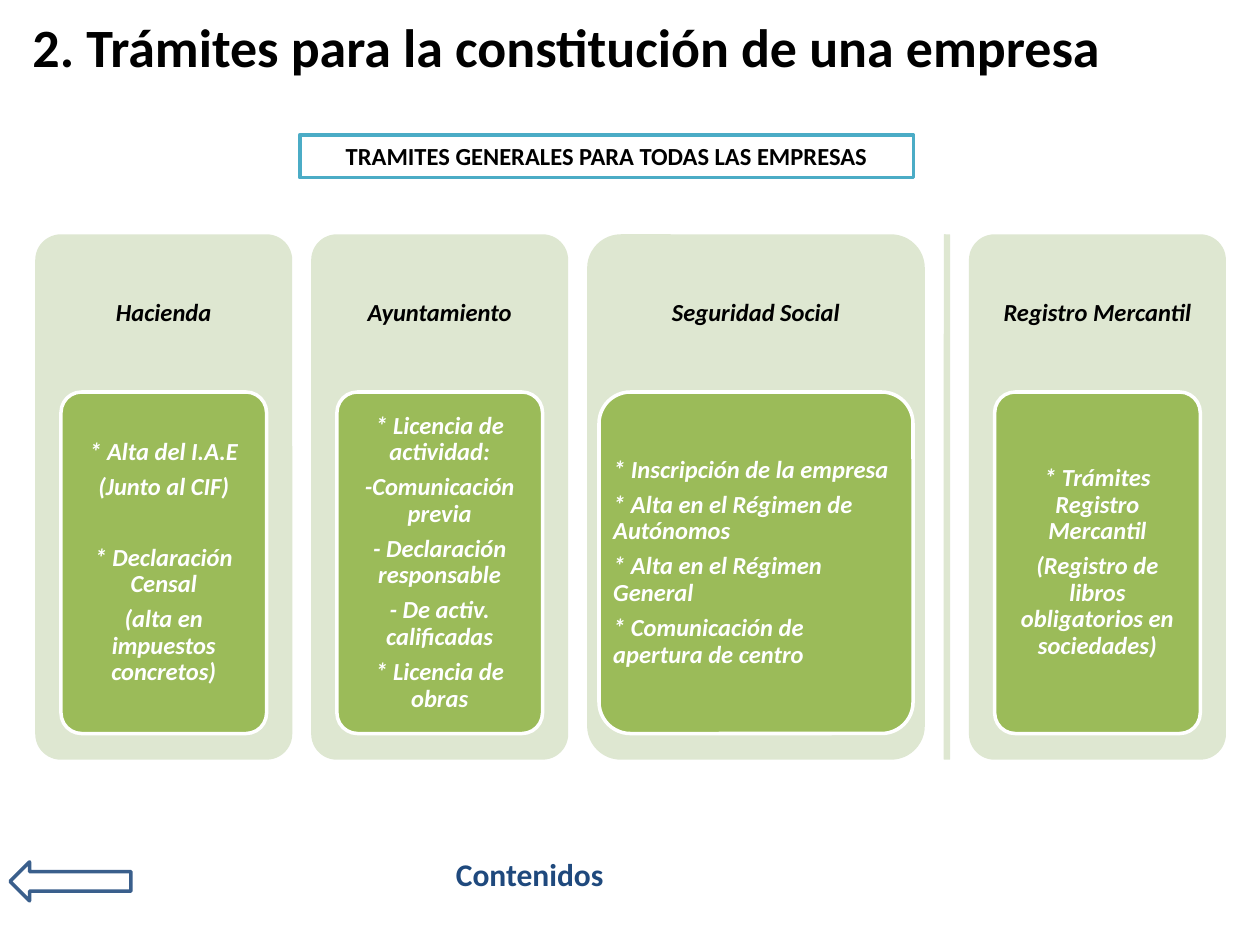
from pptx import Presentation
from pptx.dml.color import RGBColor
from pptx.enum.shapes import MSO_SHAPE as Shape
from pptx.enum.text import MSO_ANCHOR as Anchor, PP_ALIGN as Align
from pptx.util import Inches, Pt

# Grid of 100 columns by 75 rows on a 10 x 7.5 inch slide
CELL = Inches(0.1)
BLACK, WHITE = "000000", "FFFFFF"
PALE, GREEN = "DEE7D1", "9BBB59"
TEAL, BLUE, NAVY = "4BACC6", "3A5F8C", "1F497D"


def rgb(code):
    return RGBColor.from_string(code)


class Deck:
    font = "Calibri"

    def __init__(self):
        self.prs = Presentation()
        self.prs.slide_width, self.prs.slide_height = 100 * CELL, 75 * CELL
        self.s = self.prs.slides.add_slide(self.prs.slide_layouts[6])

    def box(self, at):
        return [round(n * CELL) for n in at]

    def shape(self, kind, at, fill=None, line=None, adj=None):
        sp = self.s.shapes.add_shape(kind, *self.box(at))
        sp.shadow.inherit = False
        if fill:
            sp.fill.solid()
            sp.fill.fore_color.rgb = rgb(fill)
        else:
            sp.fill.background()
        if line:
            sp.line.color.rgb = rgb(line)
            sp.line.width = Pt(2)
        else:
            sp.line.fill.background()
        if adj is not None:
            sp.adjustments[0] = adj
        return sp

    def set_text(self, sp, lines, size, color, align=Align.LEFT, anchor=Anchor.TOP,
                 italic=False, insets=(1, 0.5), spacing=None, after=0):
        tf = sp.text_frame
        tf.word_wrap = True
        tf.vertical_anchor = anchor
        tf.margin_left = tf.margin_right = round(insets[0] * CELL)
        tf.margin_top = tf.margin_bottom = round(insets[1] * CELL)
        tf.text = "\n".join(lines)
        for p in tf.paragraphs:
            p.alignment = align
            p.line_spacing = spacing
            p.space_after = Pt(after)
            for r in p.runs:
                f = r.font
                f.name, f.size, f.bold, f.italic = self.font, Pt(size), True, italic
                f.color.rgb = rgb(color)
        return tf

    def text(self, at, lines, size, color, **style):
        return self.set_text(self.s.shapes.add_textbox(*self.box(at)), lines, size, color, **style)

    def panel(self, x, w):
        self.shape(Shape.ROUNDED_RECTANGLE, (x, TOP, w, HEIGHT), PALE, adj=0.1)

    def column(self, x, w, heading, lines, share, align):
        """Pale panel with a heading and a green card; returns the card's text."""
        style = dict(anchor=Anchor.MIDDLE, italic=True, spacing=0.9, after=4.9)
        self.panel(x, w)
        self.text((x, TOP, w, 0.3 * HEIGHT), [heading], 14, BLACK,
                  align=Align.CENTER, insets=(0.6, 0.6), **style)
        card = self.shape(Shape.ROUNDED_RECTANGLE,
                          (x + w * (1 - share) / 2, TOP + 0.3 * HEIGHT, w * share, 0.65 * HEIGHT),
                          GREEN, WHITE, adj=0.1)
        return self.set_text(card, lines, 14, WHITE, align=align, insets=(0.4, 0.3), **style)


# Panel row: top and height in rows, gap and widths in columns
TOP, HEIGHT, GAP = 18.6, 41.7, 1.5
NARROW, WIDE, STRIP = 20.4, 26.8, 0.5

# Each entry: width, heading, lines, card share of the width, alignment
COLUMNS = [
    (NARROW, "Hacienda",
     ["* Alta del I.A.E", "(Junto al CIF)", "* Declaración Censal",
      "(alta en impuestos concretos)"], 0.8, Align.CENTER),
    (NARROW, "Ayuntamiento",
     ["* Licencia de actividad:", "-Comunicación previa", "- Declaración responsable",
      "- De activ. calificadas", "* Licencia de obras"], 0.8, Align.CENTER),
    (WIDE, "Seguridad Social",
     ["* Inscripción de la empresa", "* Alta en el Régimen de Autónomos",
      "* Alta en el Régimen General", "* Comunicación de apertura de centro"],
     0.93, Align.LEFT),
    (STRIP, None, [], 0, None),
    (NARROW, "Registro Mercantil",
     ["* Trámites Registro Mercantil",
      "(Registro de libros obligatorios en sociedades)"], 0.8, Align.CENTER),
]


def main():
    deck = Deck()

    # Title
    deck.text((1.6, 0.5, 90, 6.3), ["2. Trámites para la constitución de una empresa"],
              30.8, BLACK, anchor=Anchor.MIDDLE)

    # Columns of procedures
    x = 2.8
    for w, heading, lines, share, align in COLUMNS:
        if heading:
            tf = deck.column(x, w, heading, lines, share, align)
            if heading == "Hacienda":
                tf.paragraphs[2].space_before = Pt(20)  # second group of procedures
        else:
            deck.panel(x, w)
        x += w + GAP

    # Banner
    banner = deck.shape(Shape.RECTANGLE, (23.8, 10.7, 48.7, 3.4), WHITE, TEAL)
    deck.set_text(banner, ["TRAMITES GENERALES PARA TODAS LAS EMPRESAS"], 14, BLACK,
                  align=Align.CENTER)

    # Footer: back arrow and contents label
    deck.shape(Shape.LEFT_ARROW, (0.8, 68.4, 9.6, 3.1), line=BLUE)
    deck.text((35.2, 67.4, 14.4, 4), ["Contenidos"], 18, NAVY)

    deck.prs.save("out.pptx")


if __name__ == "__main__":
    main()
